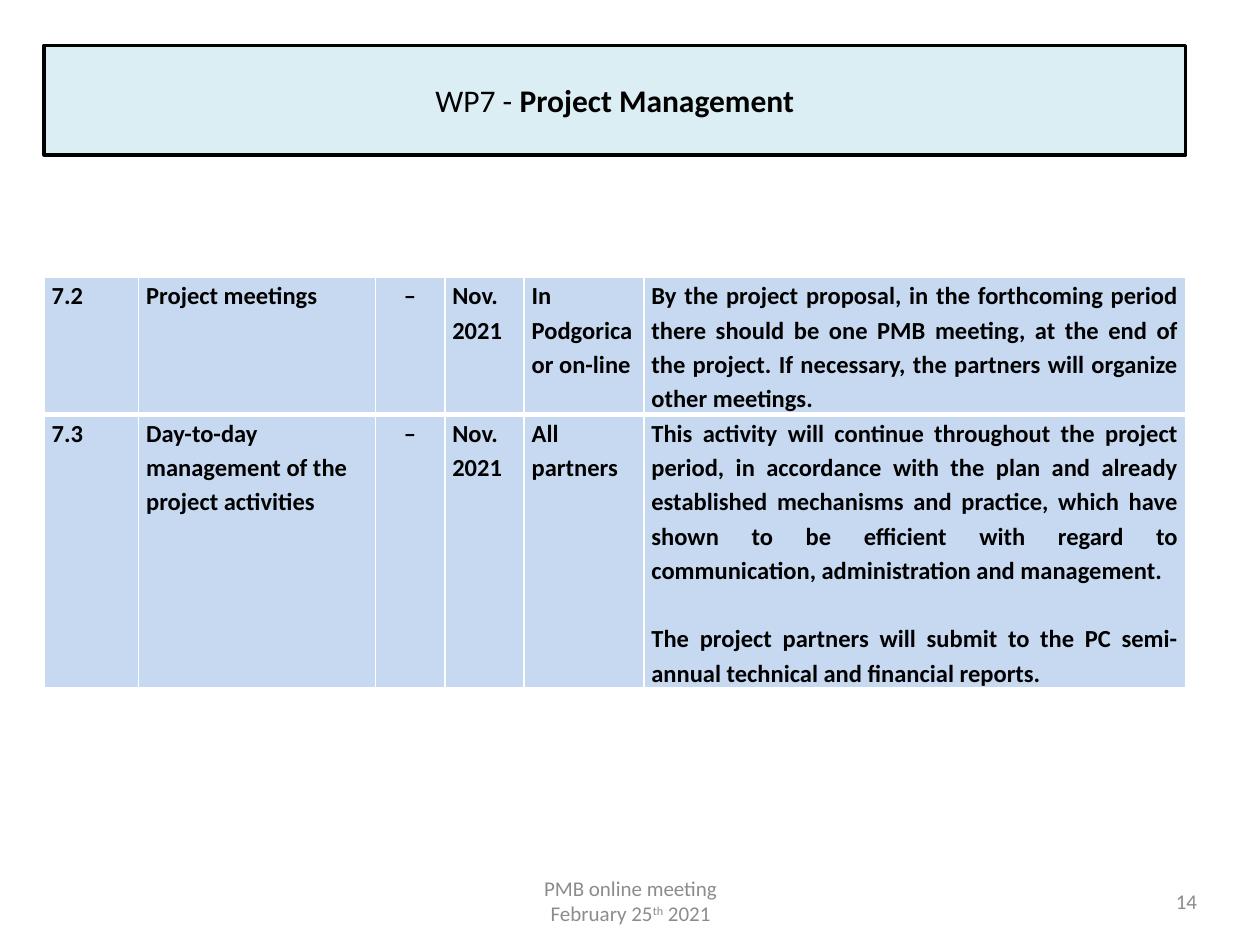
from dataclasses import dataclass

from lxml import etree
from pptx import Presentation
from pptx import util as u
from pptx.dml.color import RGBColor
from pptx.enum import shapes, text
from pptx.oxml.ns import qn

BLACK = RGBColor(0x00, 0x00, 0x00)
GRAY = RGBColor(0x8C, 0x8C, 0x8C)
WHITE = RGBColor(0xFF, 0xFF, 0xFF)
PALE_TEAL = RGBColor(0xDB, 0xEE, 0xF4)
PALE_BLUE = RGBColor(0xC6, 0xD9, 0xF1)
LEFT, CENTER, RIGHT, JUSTIFY = (
    text.PP_ALIGN.LEFT, text.PP_ALIGN.CENTER, text.PP_ALIGN.RIGHT, text.PP_ALIGN.JUSTIFY
)
MIDDLE = text.MSO_ANCHOR.MIDDLE


@dataclass
class Span:
    words: str
    bold: bool = False
    superscript: bool = False


@dataclass
class Activity:
    number: str
    name: str
    start: str
    deadline: str
    place: str
    plan: list[str]
    height: float


COLUMN_WIDTHS = [0.75, 1.88, 0.55, 0.63, 0.95, 4.3]
COLUMN_ALIGNMENTS = [LEFT, LEFT, CENTER, LEFT, LEFT, JUSTIFY]
ACTIVITIES = [
    Activity("7.2", "Project meetings", "–", "Nov. 2021", "In Podgorica or on-line", [
        "By the project proposal, in the forthcoming period there should be one PMB meeting, "
        "at the end of the project. If necessary, the partners will organize other meetings.",
    ], 1.09),
    Activity("7.3", "Day-to-day management of the project activities", "–", "Nov. 2021",
             "All partners", [
        "This activity will continue throughout the project period, in accordance with the plan "
        "and already established mechanisms and practice, which have shown to be efficient with "
        "regard to communication, administration and management.",
        "The project partners will submit to the PC semi-annual technical and financial reports.",
    ], 2.17),
]


def write(frame, paragraphs: list[list[Span]], *, size: float, color: RGBColor, align,
          line_spacing: float = 1.0, gap: float = 0) -> None:
    for index, spans in enumerate(paragraphs):
        para = frame.add_paragraph() if index else frame.paragraphs[0]
        para.alignment = align
        para.line_spacing = line_spacing
        if index:
            para.space_before = u.Pt(gap)
        for item in spans:
            span = para.add_run()
            span.text = item.words
            span.font.name = "Calibri"
            span.font.size = u.Pt(size)
            span.font.bold = item.bold
            span.font.color.rgb = color
            if item.superscript:
                span.font._element.set("baseline", "30000")


def add_label(page, bounds: tuple, paragraphs: list[list[Span]], align,
              left_margin: float = 0) -> None:
    box = page.shapes.add_textbox(*map(u.Inches, bounds))
    frame = box.text_frame
    frame.word_wrap = True
    frame.vertical_anchor = MIDDLE
    frame.margin_left = u.Inches(left_margin)
    frame.margin_right = 0
    write(frame, paragraphs, size=12, color=GRAY, align=align)


def add_title(page) -> None:
    box = page.shapes.add_shape(
        shapes.MSO_SHAPE.RECTANGLE, *map(u.Inches, (0.35, 0.36, 9.06, 0.87)))
    box.shadow.inherit = False
    box.fill.solid()
    box.fill.fore_color.rgb = PALE_TEAL
    box.line.color.rgb = BLACK
    box.line.width = u.Pt(2)
    box.text_frame.vertical_anchor = MIDDLE
    write(box.text_frame, [[Span("WP7 - "), Span("Project Management", bold=True)]],
          size=18, color=BLACK, align=CENTER)


def set_borders(cell, top: float, bottom: float) -> None:
    properties = cell._tc.get_or_add_tcPr()
    for side, width in {"lnL": 1, "lnR": 1, "lnT": top, "lnB": bottom}.items():
        line = etree.SubElement(properties, qn(f"a:{side}"), w=str(u.Pt(width)))
        fill = etree.SubElement(line, qn("a:solidFill"))
        etree.SubElement(fill, qn("a:srgbClr"), val=str(WHITE))


def fill_cell(cell, paragraphs: list[str], align, top: float, bottom: float) -> None:
    set_borders(cell, top, bottom)
    cell.fill.solid()
    cell.fill.fore_color.rgb = PALE_BLUE
    cell.margin_left = cell.margin_right = u.Inches(0.06)
    cell.margin_top = cell.margin_bottom = 0
    write(cell.text_frame, [[Span(words, bold=True)] for words in paragraphs],
          size=14, color=BLACK, align=align, line_spacing=1.15, gap=19.6)


def add_activities(page) -> None:
    height = sum(activity.height for activity in ACTIVITIES)
    table = page.shapes.add_table(
        len(ACTIVITIES), len(COLUMN_WIDTHS),
        *map(u.Inches, (0.35, 2.2, sum(COLUMN_WIDTHS), height))).table
    table.first_row = table.horz_banding = False
    for column, width in zip(table.columns, COLUMN_WIDTHS):
        column.width = u.Inches(width)
    last = len(ACTIVITIES) - 1
    for index, (row, activity) in enumerate(zip(table.rows, ACTIVITIES)):
        row.height = u.Inches(activity.height)
        contents = [[activity.number], [activity.name], [activity.start],
                    [activity.deadline], [activity.place], activity.plan]
        for cell, words, align in zip(row.cells, contents, COLUMN_ALIGNMENTS):
            fill_cell(cell, words, align, top=3 if index else 1, bottom=3 if index < last else 1)


def main() -> None:
    deck = Presentation()
    deck.slide_width, deck.slide_height = u.Inches(10), u.Inches(7.5)
    page = deck.slides.add_slide(deck.slide_layouts[6])
    add_label(page, (2.09, 6.95, 5.83, 0.4), [
        [Span("PMB online meeting")],
        [Span("February 25"), Span("th", superscript=True), Span(" 2021")],
    ], CENTER)
    add_label(page, (7.99, 6.95, 1.51, 0.4), [[Span("14")]], RIGHT, left_margin=0.1)
    add_title(page)
    add_activities(page)
    deck.save("out.pptx")


if __name__ == "__main__":
    main()
